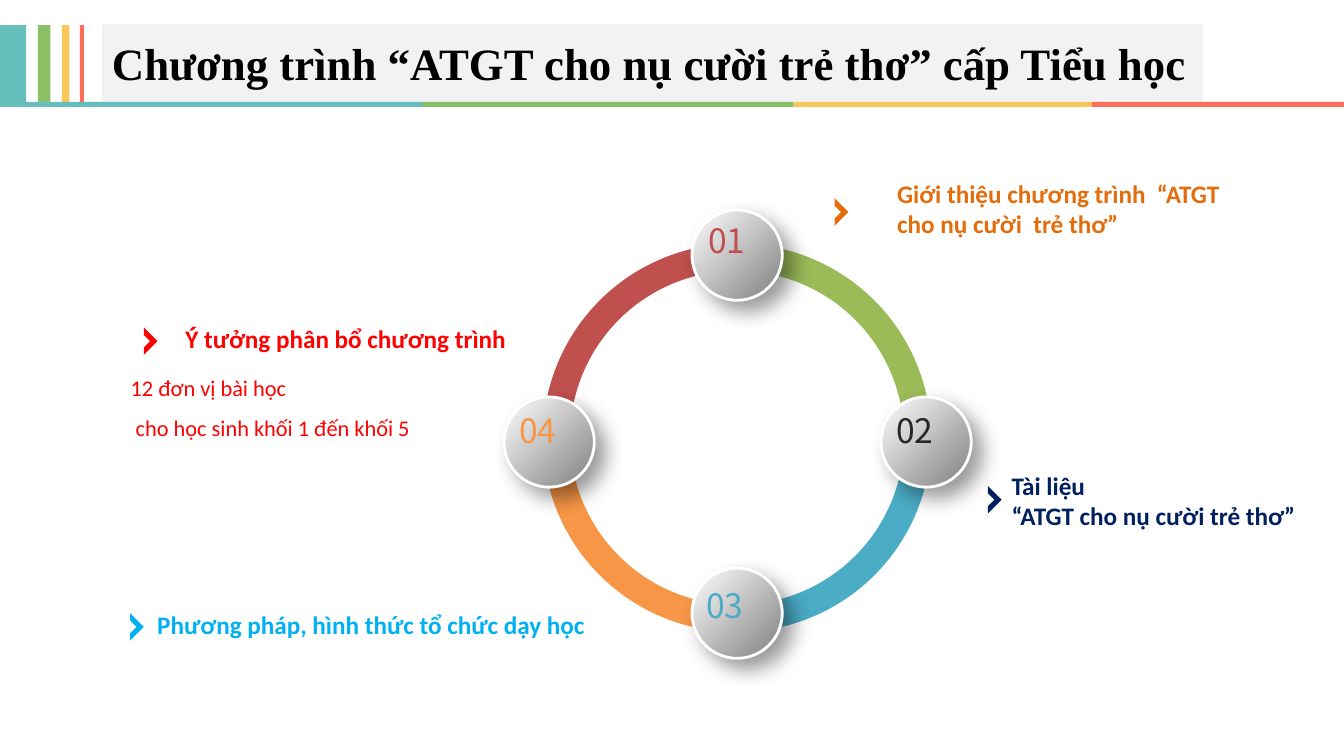
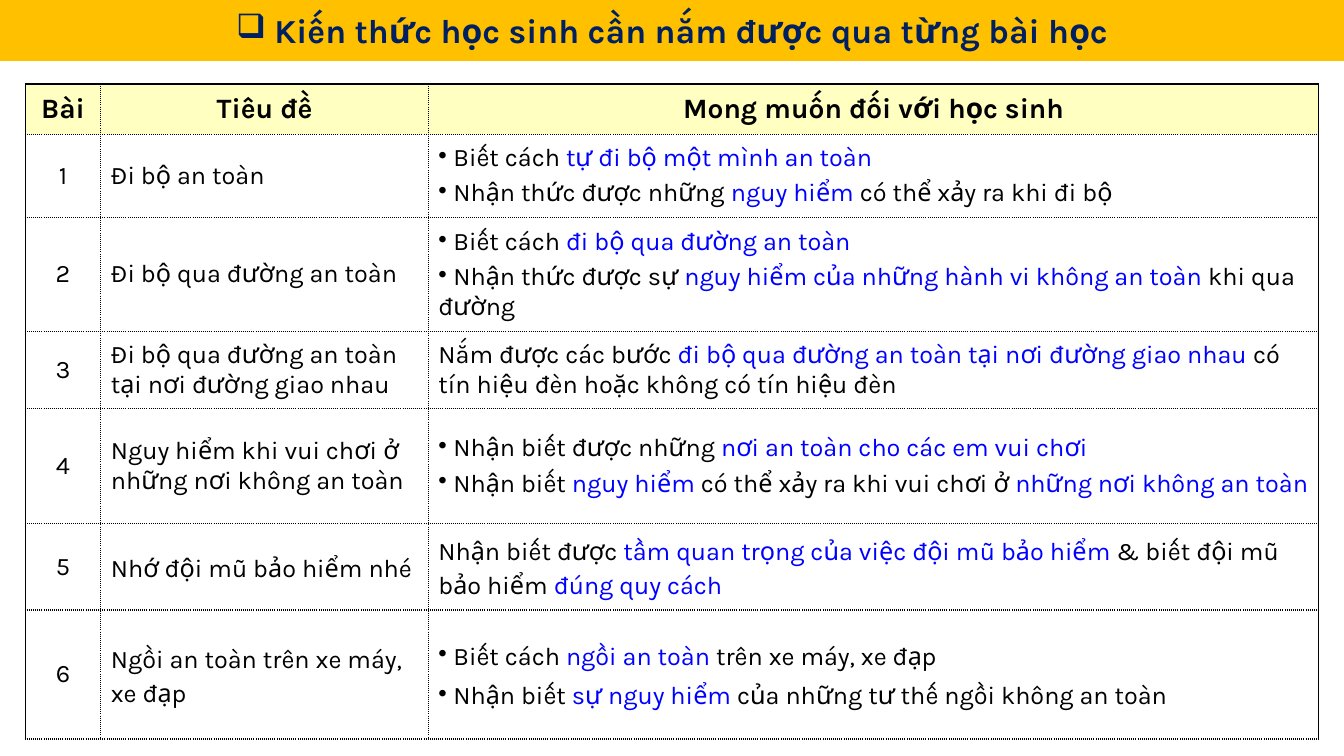
"""Build two slides on a road safety course for primary schools."""
from lxml.etree import SubElement
from pptx import Presentation
from pptx.dml.color import RGBColor
from pptx.enum.shapes import MSO_SHAPE
from pptx.enum.text import MSO_ANCHOR, MSO_AUTO_SIZE, PP_ALIGN
from pptx.oxml.ns import qn
from pptx.util import Pt

PX = 9525
RECT, OVAL, ARC = MSO_SHAPE.RECTANGLE, MSO_SHAPE.OVAL, MSO_SHAPE.BLOCK_ARC
LEFT, MID = PP_ALIGN.LEFT, PP_ALIGN.CENTER
CENTER = MSO_ANCHOR.MIDDLE
FIXED = MSO_AUTO_SIZE.NONE
BLACK, WHITE, NAVY, BLUE, RED = "000000", "FFFFFF", "002060", "0000FF", "FF0000"
BANDS = ["66BFBC", "8CC066", "FBC75D", "FC6E5B"]
rgb = RGBColor.from_string


def write(frame, text, size=18, color=BLACK, font="Calibri", bold=False,
          align=LEFT, lead=None, gap=0, bullet=None):
    """Write lines split by newlines; every second part between bars is blue."""
    for row, line in enumerate(text.split("\n")):
        para = frame.add_paragraph() if row else frame.paragraphs[0]
        if bullet:
            props = para._p.get_or_add_pPr()
            props.set("marL", "0")
            props.set("indent", "0")
            SubElement(props, qn("a:buChar"), char=bullet)
        para.alignment = align
        if lead:
            para.line_spacing = lead
        if row and gap:
            para.space_before = Pt(gap)
        for part, words in enumerate(line.split("|")):
            if words:
                run = para.add_run()
                run.text = words
                run.font.name, run.font.size, run.font.bold = font, Pt(size), bold
                run.font.color.rgb = rgb(BLUE if part % 2 else color)


def paint(shape, color):
    """Give a shape a flat fill with no line or shadow."""
    shape.fill.solid()
    shape.fill.fore_color.rgb = rgb(color)
    shape.line.fill.background()
    shape.shadow.inherit = False


deck = Presentation()
deck.slide_width, deck.slide_height = 1280 * PX, 720 * PX

heads = [
    ((97, 23, 1049, 74), "F2F2F2", "Chương trình “ATGT cho nụ cười trẻ thơ” cấp Tiểu học",
     dict(size=32, font="Times New Roman")),
    ((0, 0, 1280, 58), "FFC000", " Kiến thức học sinh cần nắm được qua từng bài học",
     dict(size=24, font="Karla", color=NAVY, align=MID, bullet="❑")),
]
for box, fill, text, style in heads:
    slide = deck.slides.add_slide(deck.slide_layouts[5])
    title = slide.shapes.title
    title.left, title.top, title.width, title.height = [n * PX for n in box]
    paint(title, fill)
    title.text_frame.auto_size = FIXED
    title.text_frame.word_wrap = True
    title.text_frame.vertical_anchor = CENTER
    write(title.text_frame, text, bold=True, **style)

intro, plan = deck.slides
shapes = intro.shapes

bars = [(0, 25), (36, 12), (59, 7), (76, 4)]
rules = [(0, 403), (403, 353), (756, 284), (1040, 240)]
for spans, top, high in [(bars, 24, 73), (rules, 97, 5)]:
    for (left, wide), color in zip(spans, BANDS):
        paint(shapes.add_shape(RECT, left * PX, top * PX, wide * PX, high * PX), color)

ring = ["4BACC6", "F79646", "C0504D", "9BBB59"]
for turn, color in enumerate(ring):
    arc = shapes.add_shape(ARC, 517 * PX, 232 * PX, 370 * PX, 370 * PX)
    arc.adjustments[0] = turn * 54
    arc.adjustments[1] = (turn + 1) % 4 * 54
    arc.adjustments[2] = 0.07
    paint(arc, color)

knobs = [
    ("01", 659, 200, 665, 205, "C0504D"),
    ("02", 839, 378, 844, 386, "262626"),
    ("03", 659, 541, 663, 552, "4BACC6"),
    ("04", 480, 378, 485, 386, "F79646"),
]
for text, left, top, inner, upper, color in knobs:
    knob = shapes.add_shape(OVAL, left * PX, top * PX, 86 * PX, 86 * PX)
    knob.fill.gradient()
    knob.fill.gradient_angle = 315
    for stop, tone in zip(knob.fill.gradient_stops, [WHITE, "808080"]):
        stop.color.rgb = rgb(tone)
    knob.line.color.rgb = rgb(WHITE)
    knob.line.width = Pt(2)
    knob.shadow.inherit = False
    glow = SubElement(knob._element.spPr.find(qn("a:effectLst")), qn("a:outerShdw"),
                      blurRad=str(Pt(15)), dist=str(Pt(10)), dir="2700000",
                      algn="ctr", rotWithShape="0")
    shade = SubElement(glow, qn("a:srgbClr"), val=BLACK)
    SubElement(shade, qn("a:alpha"), val="40000")
    label = shapes.add_textbox(inner * PX, upper * PX, 58 * PX, 48 * PX)
    label.text_frame.word_wrap = False
    write(label.text_frame, text, size=24, color=color, font="Noto Sans CJK SC")

notes = [
    ((845, 165, 349, 97), "Giới thiệu chương trình  “ATGT cho nụ cười  trẻ thơ”",
     dict(color="E46C0A", bold=True)),
    ((954, 443, 349, 68), "Tài liệu\n“ATGT cho nụ cười trẻ thơ”",
     dict(color=NAVY, bold=True)),
    ((103, 576, 501, 38), "Phương pháp, hình thức tổ chức dạy học",
     dict(color="00B0F0", bold=True, align=MID)),
    ((167, 303, 372, 38), "Ý tưởng phân bổ chương trình",
     dict(color=RED, bold=True)),
    ((115, 339, 342, 87), "12 đơn vị bài học\n cho học sinh khối 1 đến khối 5",
     dict(color=RED, size=16, lead=1.5)),
]
for box, text, style in notes:
    note = shapes.add_textbox(*[n * PX for n in box])
    note.text_frame.word_wrap = True
    write(note.text_frame, text, **style)

tip = [(0, 0), (13, 13), (0, 26), (0, 19), (6, 13), (0, 7)]
marks = [(795, 189, "E46C0A"), (941, 463, NAVY), (124, 584, "00B0F0"), (137, 312, RED)]
for left, top, color in marks:
    dots = [(left + x, top + y) for x, y in tip]
    path = shapes.build_freeform(*dots[0], scale=PX)
    path.add_line_segments(dots[1:], close=True)
    paint(path.convert_to_shape(), color)

rows = [
    ("Bài", "Tiêu đề", "Mong muốn đối với học sinh"),
    ("1", "Đi bộ an toàn",
     " Biết cách |tự đi bộ một mình an toàn\n"
     " Nhận thức được những |nguy hiểm| có thể xảy ra khi đi bộ"),
    ("2", "Đi bộ qua đường an toàn",
     " Biết cách |đi bộ qua đường an toàn\n"
     " Nhận thức được sự |nguy hiểm của những hành vi không an toàn |khi qua đường"),
    ("3", "Đi bộ qua đường an toàn tại nơi đường giao nhau",
     "Nắm được các bước |đi bộ qua đường an toàn tại nơi đường giao nhau"
     "| có tín hiệu đèn hoặc không có tín hiệu đèn"),
    ("4", "Nguy hiểm khi vui chơi ở những nơi không an toàn",
     " Nhận biết được những |nơi an toàn cho các em vui chơi\n"
     " Nhận biết |nguy hiểm |có thể xảy ra khi vui chơi ở |những nơi không an toàn"),
    ("5", "Nhớ đội mũ bảo hiểm nhé",
     "Nhận biết được |tầm quan trọng của việc đội mũ bảo hiểm"
     "| & biết đội mũ bảo hiểm |đúng quy cách"),
    ("6", "Ngồi an toàn trên xe máy, xe đạp",
     " Biết cách |ngồi an toàn |trên xe máy, xe đạp\n"
     " Nhận biết |sự nguy hiểm |của những tư thế ngồi không an toàn"),
]
wides = [72, 312, 848]
highs = [48, 79, 109, 73, 110, 82, 123]
table = plan.shapes.add_table(len(rows), len(wides), 24 * PX, 80 * PX,
                              sum(wides) * PX, sum(highs) * PX).table
for col, wide in zip(table.columns, wides):
    col.width = wide * PX
for r, (texts, high) in enumerate(zip(rows, highs)):
    table.rows[r].height = high * PX
    for c, text in enumerate(texts):
        cell = table.cell(r, c)
        cell.vertical_anchor = CENTER
        props = cell._tc.get_or_add_tcPr()
        solid = {"L": c == 0, "R": c == 2, "T": r == 0, "B": False}
        for side, full in solid.items():
            edge = SubElement(props, qn("a:ln" + side), w=str(Pt(1)))
            SubElement(SubElement(edge, qn("a:solidFill")), qn("a:srgbClr"), val=BLACK)
            SubElement(edge, qn("a:prstDash"), val="solid" if full else "sysDot")
        cell.fill.solid()
        cell.fill.fore_color.rgb = rgb(WHITE if r else "FFFFC1")
        write(cell.text_frame, text, size=18 if r else 20, font="Karla", bold=r == 0,
              align=LEFT if r and c else MID, gap=4,
              lead=1.15 if r > 4 and c else None,
              bullet="•" if text.startswith(" ") else None)

deck.save("out.pptx")
